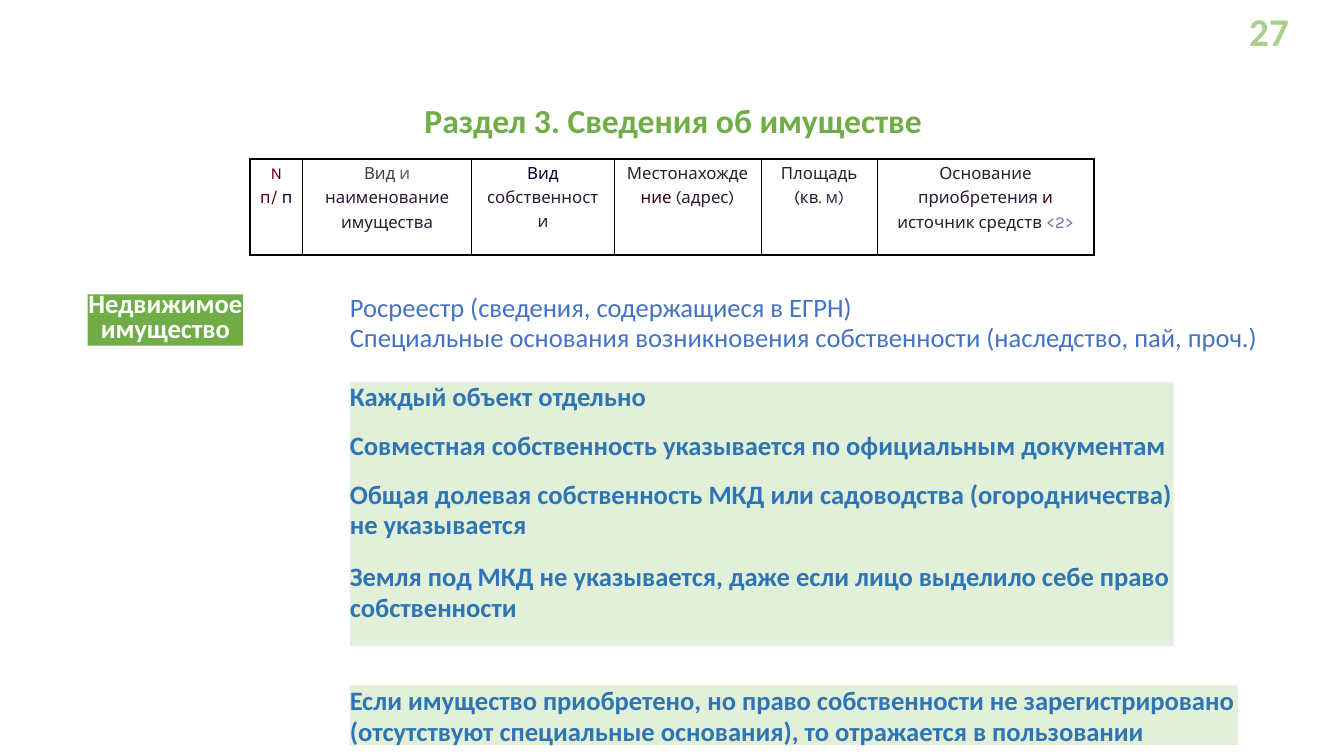
from dataclasses import dataclass

from lxml.etree import SubElement
from pptx import Presentation
from pptx.dml.color import RGBColor
from pptx.enum.shapes import MSO_SHAPE
from pptx.enum.text import MSO_ANCHOR, PP_ALIGN
from pptx.oxml.ns import qn
from pptx.util import Inches, Pt

GREEN = "70AD47"
BLUE = "2E75B6"
PALE_GREEN = "E2F0D9"
WHITE = "FFFFFF"
PLUM = "2B1C32"
MAROON = "38030D"


@dataclass
class Line:
    text: str
    spacing: float = 1.0
    after: float = 0


@dataclass
class Panel:
    left: float
    top: float
    width: float
    height: float
    fill: str
    color: str
    lines: list[Line]
    size: float = 19
    bold: bool = True
    wrap: bool = True
    align: PP_ALIGN = PP_ALIGN.LEFT


@dataclass
class Column:
    width: float
    spans: list[tuple[str, str]]
    spacing: float = 1.24
    before: float = 5.6


PANELS = [
    Panel(12.39, 0.07, 0.4, 0.29, WHITE, "A9D18E", [Line("27")], size=28, wrap=False),
    Panel(4.21, 0.99, 4.94, 0.33, WHITE, GREEN,
          [Line("Раздел 3. Сведения об имуществе")], size=24, wrap=False),
    Panel(0.87, 2.92, 1.54, 0.51, "70AD46", WHITE,
          [Line("Недвижимое имущество", 0.77)], align=PP_ALIGN.CENTER),
    Panel(3.47, 2.89, 9.02, 0.59, WHITE, "4472C4", [
        Line("Росреестр (сведения, содержащиеся в ЕГРН)"),
        Line("Специальные основания возникновения собственности (наследство, пай, проч.)", 0.96),
    ], bold=False),
    Panel(3.47, 3.79, 8.17, 2.62, PALE_GREEN, BLUE, [
        Line("Каждый объект отдельно", 0.97, 12.6),
        Line("Совместная собственность указывается по официальным документам", 0.97, 12.6),
        Line("Общая долевая собственность МКД или садоводства (огородничества) не указывается",
             0.97, 14.7),
        Line("Земля под МКД не указывается, даже если лицо выделило себе право собственности", 0.97),
    ]),
    Panel(3.47, 6.8, 8.81, 0.59, PALE_GREEN, BLUE, [
        Line("Если имущество приобретено, но право собственности не зарегистрировано "
             "(отсутствуют специальные основания), то отражается в пользовании", 0.97),
    ]),
]

COLUMNS = [
    Column(0.52, [("N п/ ", "5A0009"), ("п", "05004E")]),
    Column(1.68, [("Вид ", "404040"), ("и ", "5F5C5A"), ("наименование имущества", PLUM)]),
    Column(1.41, [("Вид ", "040033"), ("собственности", PLUM)], 1.23, 6.3),
    Column(1.46, [("Местонахожде ", PLUM), ("ние ", MAROON), ("(адрес)", PLUM)]),
    Column(1.15, [("Площадь (кв. ", PLUM), ("м)", "34365E")]),
    Column(2.15, [("Основание приобретения ", PLUM), ("и ", MAROON),
                  ("источник средств ", PLUM), ("<2>", "746FA4")]),
]


def rgb(color: str) -> RGBColor:
    return RGBColor.from_string(color)


def style_font(font, name: str, size: float, color: str, bold: bool) -> None:
    font.name = name
    font.size = Pt(size)
    font.bold = bold
    font.color.rgb = rgb(color)


def draw_panel(page, panel: Panel) -> None:
    box = page.shapes.add_shape(
        MSO_SHAPE.RECTANGLE, Inches(panel.left), Inches(panel.top),
        Inches(panel.width), Inches(panel.height))
    box.shadow.inherit = False
    box.fill.solid()
    box.fill.fore_color.rgb = rgb(panel.fill)
    box.line.fill.background()
    frame = box.text_frame
    frame.margin_left = frame.margin_right = frame.margin_top = frame.margin_bottom = 0
    frame.vertical_anchor = MSO_ANCHOR.TOP
    frame.word_wrap = panel.wrap
    frame.text = "\n".join(line.text for line in panel.lines)
    for para, line in zip(frame.paragraphs, panel.lines):
        para.alignment = panel.align
        para.line_spacing = line.spacing
        para.space_after = Pt(line.after)
        for span in para.runs:
            style_font(span.font, "Calibri", panel.size, panel.color, panel.bold)


def draw_borders(cell, widths: dict[str, float]) -> None:
    properties = cell._tc.get_or_add_tcPr()
    for position, (side, width) in enumerate(widths.items()):
        border = SubElement(properties, qn(f"a:{side}"), w=str(Pt(width)))
        properties.insert(position, border)
        fill = SubElement(border, qn("a:solidFill"))
        SubElement(fill, qn("a:srgbClr"), val="000000")


def draw_table(page, columns: list[Column]) -> None:
    total = sum(column.width for column in columns)
    table = page.shapes.add_table(
        1, len(columns), Inches(2.48), Inches(1.58), Inches(total), Inches(0.95)).table
    table.first_row = table.horz_banding = False
    last = len(columns) - 1
    for index, column in enumerate(columns):
        table.columns[index].width = Inches(column.width)
        cell = table.cell(0, index)
        cell.margin_left = cell.margin_right = Inches(0.1)
        cell.margin_top = cell.margin_bottom = 0
        cell.vertical_anchor = MSO_ANCHOR.TOP
        cell.fill.solid()
        cell.fill.fore_color.rgb = rgb(WHITE)
        draw_borders(cell, {
            "lnL": 1.5 if index == 0 else 0.75,
            "lnR": 1.5 if index == last else 0.75,
            "lnT": 1.5,
            "lnB": 1.5,
        })
        para = cell.text_frame.paragraphs[0]
        para.alignment = PP_ALIGN.CENTER
        para.line_spacing = column.spacing
        para.space_before = Pt(column.before)
        for text, color in column.spans:
            span = para.add_run()
            span.text = text
            style_font(span.font, "Karla", 12, color, False)


def main() -> None:
    deck = Presentation()
    deck.slide_width = Inches(13.33)
    deck.slide_height = Inches(7.5)
    page = deck.slides.add_slide(deck.slide_layouts[6])
    for panel in PANELS[:2]:
        draw_panel(page, panel)
    draw_table(page, COLUMNS)
    for panel in PANELS[2:]:
        draw_panel(page, panel)
    deck.save("out.pptx")


if __name__ == "__main__":
    main()
